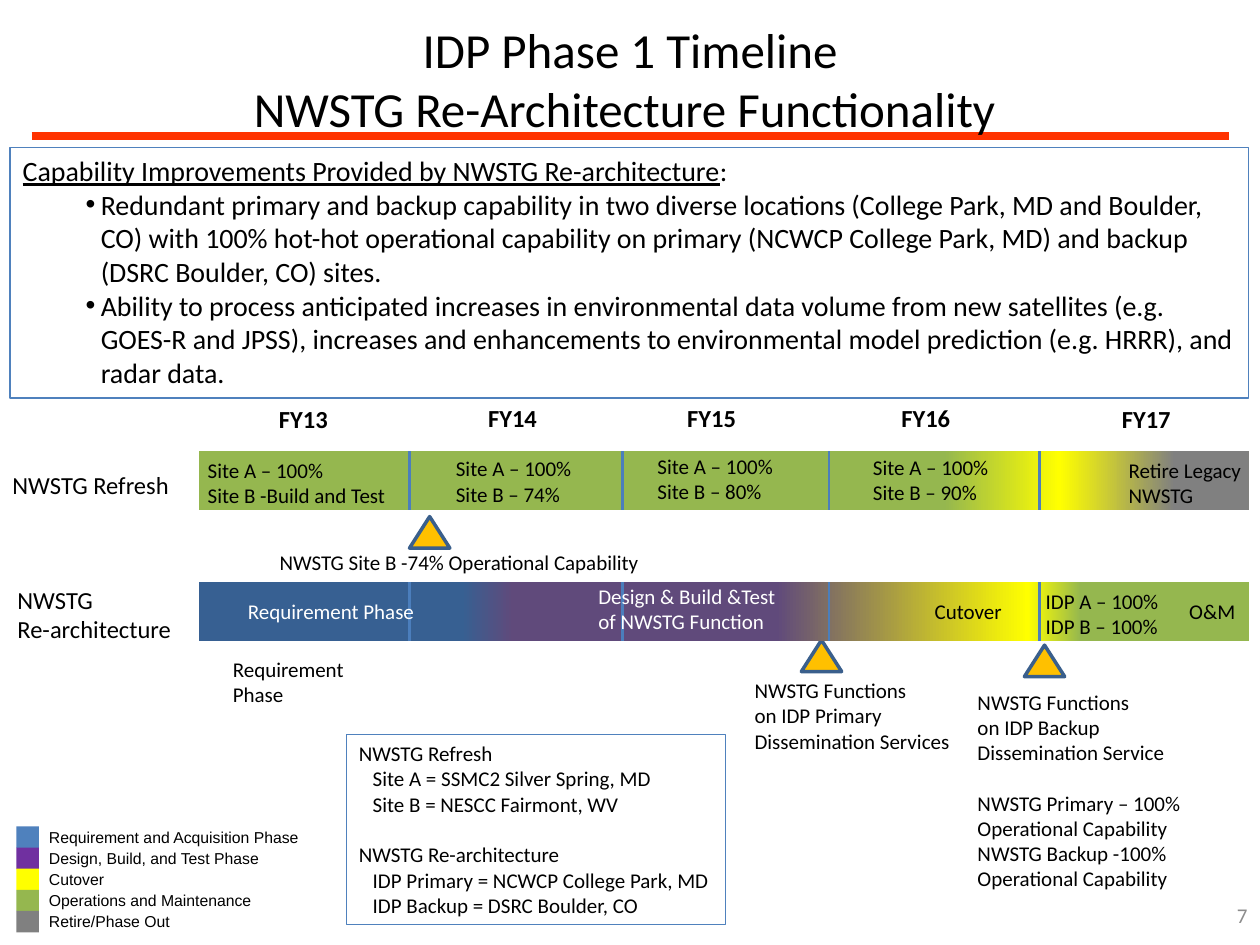
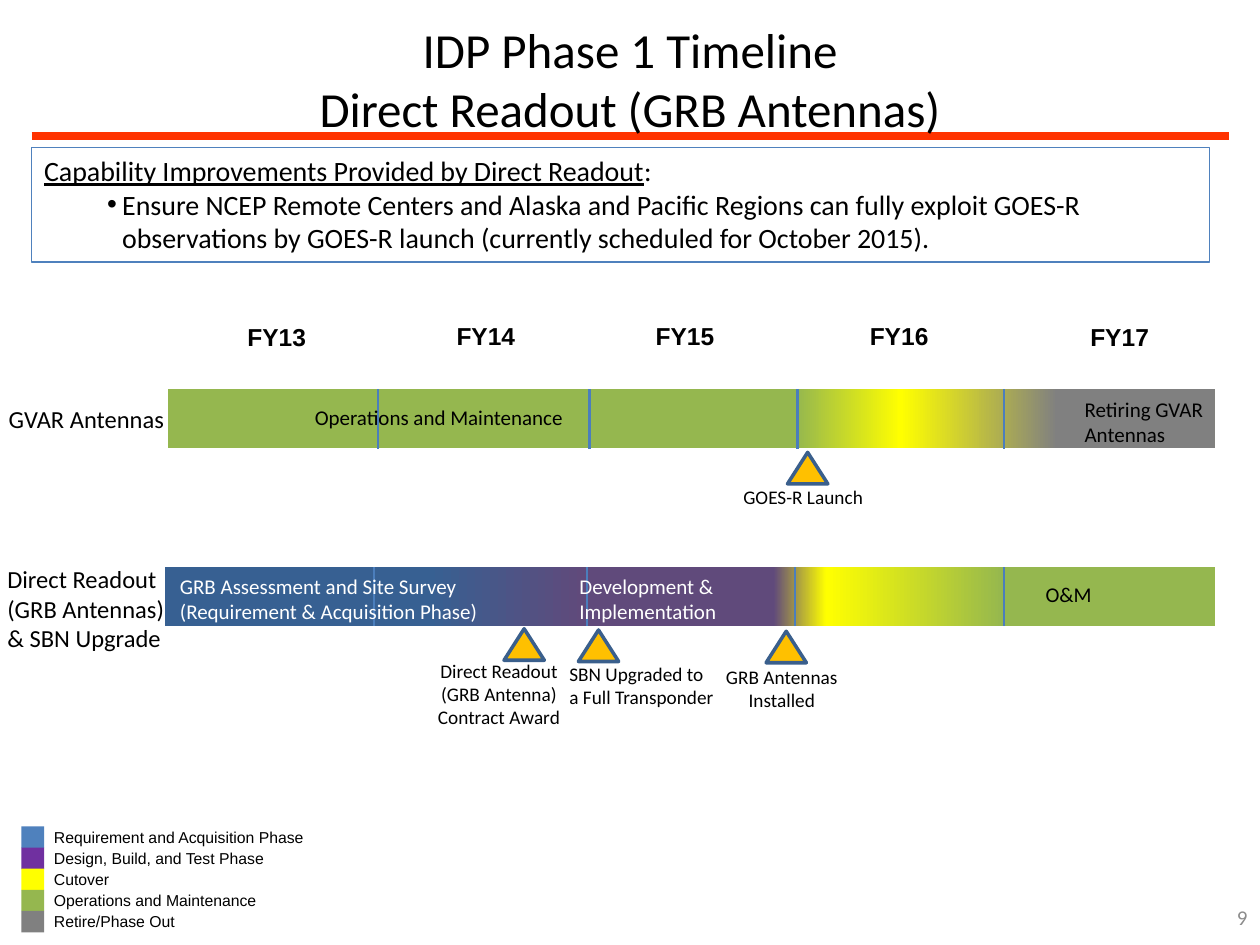
from dataclasses import dataclass

from lxml import etree
from pptx import Presentation
from pptx.dml.color import RGBColor
from pptx.enum.shapes import MSO_CONNECTOR as Link, MSO_SHAPE as Form
from pptx.enum.text import MSO_ANCHOR as Anchor, MSO_AUTO_SIZE as Fit, PP_ALIGN as Align
from pptx.oxml.ns import qn
from pptx.util import Inches, Pt

HUES = {
    "black": "000000", "white": "FFFFFF", "rule": "FF3300", "page": "8C8C8C",
    "frame": "4F81BD", "split": "4B7EBC", "gold": "FFC000", "edge": "3A5F8C",
    "need": "376092", "build": "604A7B", "cut": "FFFF00", "run": "95B74F",
    "retire": "808080", "violet": "7030A0",
}
LEGEND = [
    ("frame", "Requirement and Acquisition Phase", 2.21),
    ("violet", "Design, Build, and Test Phase", 1.9),
    ("cut", "Cutover", 0.64),
    ("run", "Operations and Maintenance", 1.82),
    ("retire", "Retire/Phase Out", 1.17),
]
YEARS = [(2.41, 0.01), (4.07, 0), (5.65, 0), (7.35, 0), (9.1, 0.01)]
SPLITS = (3.25, 4.94, 6.58, 8.25)
BAR_H = 0.47


@dataclass
class Note:
    text: str
    left: float
    top: float
    width: float
    height: float = 0.5
    size: float = 12
    hue: str = "black"
    font: str = "Calibri"
    bold: bool = False
    wrap: bool = False
    align: Align = Align.LEFT
    frame: bool = False
    gap: int = -1  # paragraph with an empty line's space above it
    inset: tuple[int, ...] = ()  # indented paragraphs


@dataclass
class Bar:
    left: float
    top: float
    width: float
    stops: list[tuple[int, str]]
    splits: tuple[float, ...]


@dataclass
class Plan:
    title: str
    page: str
    page_top: float
    box: tuple[float, float, float, float]
    lead: str
    points: list[str]
    year_font: str
    year_top: float
    year_width: float
    year_shift: float
    key_left: float
    bars: list[Bar]
    marks: list[tuple[float, float]]
    notes: list[Note]


PLANS = [
    Plan(
        "IDP Phase 1 Timeline\vNWSTG Re-Architecture Functionality ", "7", 7.08,
        (0.08, 1.17, 9.83, 1.99),
        "Capability Improvements Provided by NWSTG Re-architecture",
        ["Redundant primary and backup capability in two diverse locations "
         "(College Park, MD and Boulder, CO) with 100% hot-hot operational capability "
         "on primary (NCWCP College Park, MD) and backup (DSRC Boulder, CO) sites.",
         "Ability to process anticipated increases in environmental data volume from "
         "new satellites (e.g. GOES-R and JPSS), increases and enhancements to "
         "environmental model prediction (e.g. HRRR), and radar data."],
        "Calibri", 3.15, 0.59, 0, 0.13,
        [Bar(1.58, 3.58, 8.33, [(71, "run"), (82, "cut"), (93, "retire")], SPLITS),
         Bar(1.58, 4.62, 8.33, [(25, "need"), (30, "build"), (55, "build"),
                                (79, "cut"), (84, "run")], SPLITS)],
        [(3.25, 4.1), (8.13, 5.12), (6.36, 5.08)],
        [Note("NWSTG Refresh", 0, 3.68, 1.5, 0.34, 14),
         Note("NWSTG\nRe-architecture", 0.04, 4.59, 1.43, 0.57, 14),
         Note("Site A – 100%\nSite B -Build and Test", 1.55, 3.58, 1.62),
         Note("Site A – 100%\nSite B – 74%", 3.52, 3.57, 1.13),
         Note("Site A – 100%\nSite B – 80%", 5.12, 3.55, 1.13),
         Note("Site A – 100%\nSite B – 90%", 6.83, 3.56, 1.13),
         Note("Retire Legacy\nNWSTG", 8.86, 3.58, 1.14),
         Note("NWSTG Site B -74% Operational Capability", 2.12, 4.31, 3.08, 0.3),
         Note("Requirement Phase", 1.87, 4.7, 1.9, 0.3, hue="white", wrap=True),
         Note("Design & Build &Test of NWSTG Function", 4.65, 4.58, 1.61,
              hue="white", wrap=True),
         Note("Cutover", 7.32, 4.7, 0.9, 0.3, wrap=True),
         Note("IDP A – 100%\nIDP B – 100%", 8.2, 4.62, 1.11),
         Note("O&M", 9.34, 4.7, 0.57, 0.3),
         Note("Requirement\nPhase", 1.75, 5.16, 1.13),
         Note("NWSTG Functions\non IDP Primary\nDissemination Services",
              5.89, 5.33, 1.77, 0.71),
         Note("NWSTG Functions\non IDP Backup\nDissemination Service\n"
              "NWSTG Primary – 100%\nOperational Capability\n"
              "NWSTG Backup -100%\nOperational Capability",
              7.66, 5.42, 1.87, 1.72, gap=3),
         Note("NWSTG Refresh\nSite A = SSMC2 Silver Spring, MD\n"
              "Site B = NESCC Fairmont, WV\nNWSTG Re-architecture\n"
              "IDP Primary = NCWCP College Park, MD\nIDP Backup = DSRC Boulder, CO",
              2.75, 5.83, 3.01, 1.51, frame=True, gap=3, inset=(1, 2, 4, 5))],
    ),
    Plan(
        "IDP Phase 1 Timeline\vDirect Readout (GRB Antennas)", "9", 7.1,
        (0.25, 1.17, 9.35, 0.91),
        "Capability Improvements Provided by Direct Readout",
        ["Ensure NCEP Remote Centers and Alaska and Pacific Regions can fully exploit "
         "GOES-R observations by GOES-R launch (currently scheduled for October 2015)."],
        "Arial", 2.5, 0.67, -0.21, 0.17,
        [Bar(1.33, 3.09, 8.31, [(60, "run"), (70, "cut"), (85, "retire")],
             (3, 4.68, 6.33, 7.97)),
         Bar(1.31, 4.5, 8.33, [(25, "need"), (40, "build"), (58, "build"),
                               (63, "cut"), (80, "run")], (2.97, 4.66, 6.31, 7.97))],
        [(6.25, 3.59), (4, 4.99), (4.59, 5), (6.08, 5.01)],
        [Note("GVAR Antennas", -0.03, 3.16, 1.45, 0.34, 14),
         Note("Direct Readout\n(GRB Antennas)\n& SBN Upgrade",
              -0.04, 4.43, 1.46, 0.81, 14),
         Note("Operations and Maintenance", 2.4, 3.16, 2.19, 0.3),
         Note("Retiring GVAR\nAntennas", 8.51, 3.1, 1.15),
         Note("GOES-R Launch", 5.5, 3.8, 1.75, 0.29, 11, wrap=True, align=Align.CENTER),
         Note("GRB Assessment and Site Survey\n(Requirement & Acquisition Phase)",
              1.33, 4.5, 2.67, hue="white", wrap=True),
         Note("Development & Implementation", 4.5, 4.5, 1.81, hue="white", wrap=True),
         Note("O&M", 8.2, 4.57, 0.57, 0.3),
         Note("Direct Readout (GRB Antenna) Contract Award", 3.25, 5.18, 1.42, 0.66, 11,
              wrap=True, align=Align.CENTER),
         Note("SBN Upgraded to\na Full Transponder", 4.42, 5.21, 1.75, 0.47, 11,
              wrap=True),
         Note("GRB Antennas\nInstalled", 5.33, 5.23, 1.75, 0.47, 11, wrap=True,
              align=Align.CENTER)],
    ),
]


def rgb(hue: str) -> RGBColor:
    return RGBColor.from_string(HUES[hue])


def style(para, size: float, hue: str = "black", font: str = "Calibri",
          bold: bool = False) -> None:
    for run in para.runs:
        run.font.size, run.font.name, run.font.bold = Pt(size), font, bold
        run.font.color.rgb = rgb(hue)


def place(shape, left: float, top: float, width: float, height: float) -> None:
    shape.left, shape.top = Inches(left), Inches(top)
    shape.width, shape.height = Inches(width), Inches(height)


def outline(shape, hue: str, width: float) -> None:
    shape.line.color.rgb = rgb(hue)
    shape.line.width = Pt(width)


def add_line(slide, x1: float, y1: float, x2: float, y2: float, hue: str, width: float):
    line = slide.shapes.add_connector(Link.STRAIGHT, *map(Inches, (x1, y1, x2, y2)))
    outline(line, hue, width)
    etree.SubElement(line.element.spPr, qn("a:effectLst"))
    return line


def add_form(slide, form: Form, *area: float):
    shape = slide.shapes.add_shape(form, *map(Inches, area))
    shape.shadow.inherit = False
    shape.line.fill.background()
    return shape


def add_block(slide, hue: str, *area: float) -> None:
    block = add_form(slide, Form.RECTANGLE, *area)
    block.fill.solid()
    block.fill.fore_color.rgb = rgb(hue)


def add_note(slide, note: Note):
    box = slide.shapes.add_textbox(
        *map(Inches, (note.left, note.top, note.width, note.height)))
    if note.frame:
        outline(box, "frame", 0.75)
    frame = box.text_frame
    frame.word_wrap = note.wrap
    frame.text = note.text
    for i, para in enumerate(frame.paragraphs):
        para.alignment = note.align
        if i in note.inset:
            para._p.get_or_add_pPr().set("marL", str(Inches(0.11)))
        if i == note.gap:
            para.space_before = Pt(note.size * 1.22)
        style(para, note.size, note.hue, note.font, note.bold)
    return box


def add_bar(slide, bar: Bar) -> None:
    shape = add_form(slide, Form.RECTANGLE, bar.left, bar.top, bar.width, BAR_H)
    shape.fill.gradient()
    shape.fill.gradient_angle = 0
    stops = shape.element.spPr.find(".//" + qn("a:gsLst"))
    for old in list(stops):
        stops.remove(old)
    for pos, hue in bar.stops:
        stop = etree.SubElement(stops, qn("a:gs"), pos=str(pos * 1000))
        etree.SubElement(stop, qn("a:srgbClr"), val=HUES[hue])
    for x in bar.splits:
        add_line(slide, x, bar.top, x, bar.top + BAR_H, "split", 1.5)


def add_mark(slide, left: float, top: float) -> None:
    mark = add_form(slide, Form.ISOSCELES_TRIANGLE, left, top, 0.32, 0.25)
    mark.fill.solid()
    mark.fill.fore_color.rgb = rgb("gold")
    outline(mark, "edge", 2)


def set_title(slide, text: str) -> None:
    title = slide.shapes.title
    place(title, 0.5, 0, 9, 1.25)
    frame = title.text_frame
    frame.text = text
    frame.auto_size, frame.vertical_anchor = Fit.NONE, Anchor.MIDDLE
    style(frame.paragraphs[0], 28)


def set_body(slide, plan: Plan) -> None:
    body = slide.placeholders[1]
    place(body, *plan.box)
    outline(body, "frame", 0.75)
    frame = body.text_frame
    frame.text = "\n".join([plan.lead, *plan.points])
    frame.auto_size, frame.vertical_anchor = Fit.NONE, Anchor.TOP
    head = frame.paragraphs[0]
    head.add_run().text = ":"
    for i, para in enumerate(frame.paragraphs):
        props = para._p.get_or_add_pPr()
        props.set("marL", str(Inches(0.62 if i else 0)))
        props.set("indent", str(Inches(-0.12 if i else 0)))
        if i:
            etree.SubElement(props, qn("a:buFont"), typeface="Arial")
            etree.SubElement(props, qn("a:buChar"), char="•")
        else:
            etree.SubElement(props, qn("a:buNone"))
        para.space_before = Pt(0)
        style(para, 16)
    head.runs[0].font.underline = True


def add_legend(slide, left: float) -> None:
    for i, (hue, text, width) in enumerate(LEGEND):
        drop = i * 0.1675
        add_block(slide, hue, left, 6.56 + drop, 0.18, 0.17)
        add_note(slide, Note(text, left + 0.16, 6.52 + drop, width, 0.25, 9, font="Arial"))


def add_page(slide, plan: Plan) -> None:
    box = add_note(slide, Note(plan.page, 7.67, plan.page_top, 2.33, 0.4, hue="page",
                               wrap=True, align=Align.RIGHT))
    box.text_frame.vertical_anchor = Anchor.MIDDLE
    box.text_frame.paragraphs[0].line_spacing = 0.8


def add_plan(deck, layout, plan: Plan):
    slide = deck.slides.add_slide(layout)
    set_title(slide, plan.title)
    set_body(slide, plan)
    add_page(slide, plan)
    for i, (mid, drop) in enumerate(YEARS, 13):
        left = mid + plan.year_shift - plan.year_width / 2
        add_note(slide, Note(f"FY{i}", left, plan.year_top + drop, plan.year_width, 0.34,
                             14, font=plan.year_font, bold=True))
    for mark in plan.marks:
        add_mark(slide, *mark)
    for bar in plan.bars:
        add_bar(slide, bar)
    for note in plan.notes:
        add_note(slide, note)
    add_legend(slide, plan.key_left)
    return slide


def main() -> None:
    deck = Presentation()
    deck.slide_width, deck.slide_height = Inches(10), Inches(7.5)
    layout = deck.slide_layouts[1]
    slides = [add_plan(deck, layout, plan) for plan in PLANS]
    # The red rule under the title belongs to the shared layout.
    rule = add_line(slides[0], 0.25, 1.08, 9.75, 1.08, "rule", 4.5)
    layout.shapes.element.append(rule.element)
    deck.save("out.pptx")


if __name__ == "__main__":
    main()
